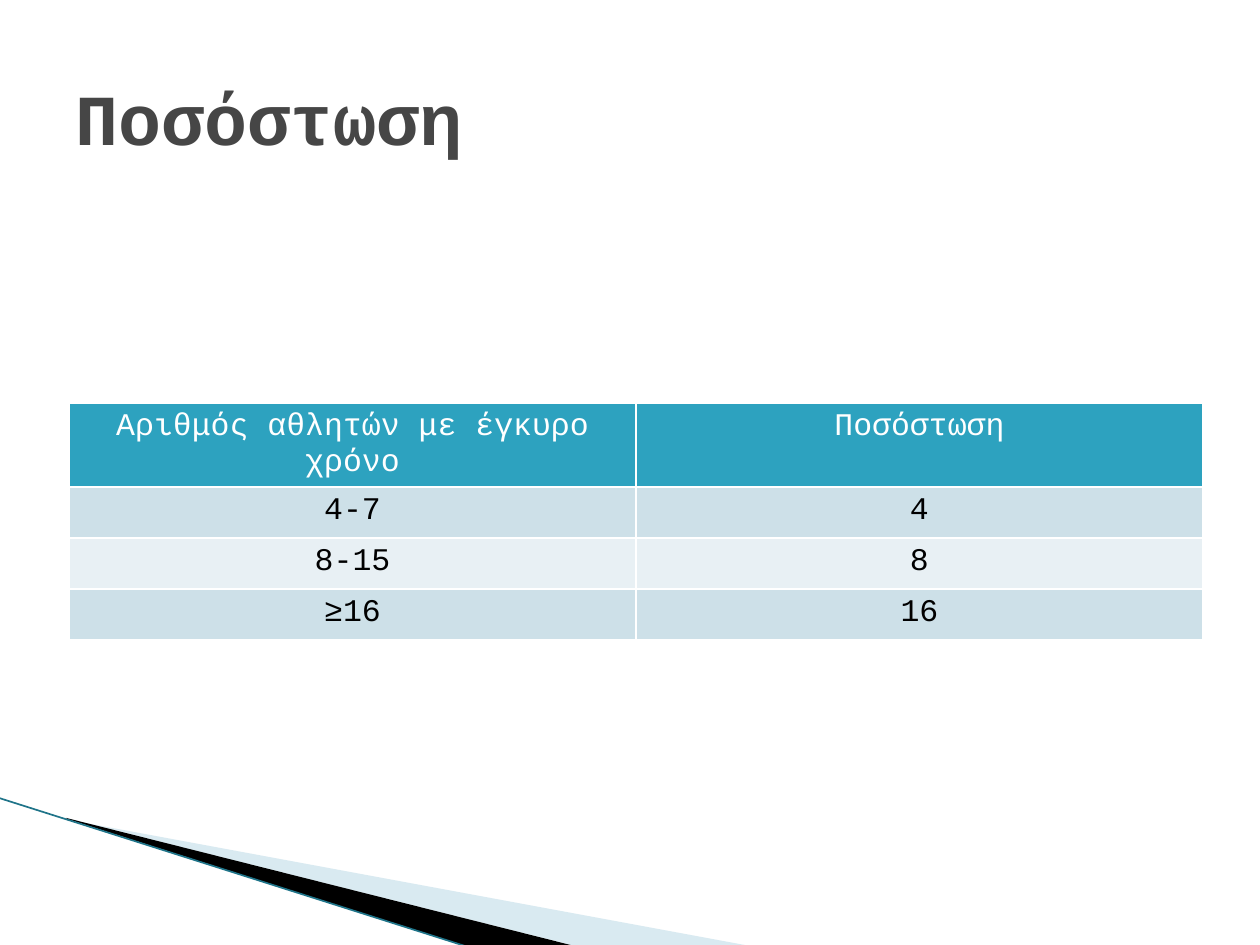
from lxml.etree import SubElement
from pptx import Presentation
from pptx.dml.color import RGBColor
from pptx.enum.shapes import MSO_CONNECTOR
from pptx.enum.text import MSO_ANCHOR, PP_ALIGN
from pptx.oxml.ns import qn
from pptx.util import Pt

PX = 914400 // 126
FONT = "Courier New"
COLORS = {
    "title": "464646", "header": "2DA2BF", "band_dark": "CDE0E8",
    "band_light": "E8F0F4", "white": "FFFFFF", "black": "000000",
    "wedge": "A0CBDC", "edge": "1F7489",
}
TITLE = "Ποσόστωση"
TITLE_BOX = (63, 38, 1134, 158)
ROWS = [
    ("Αριθμός αθλητών με έγκυρο χρόνο", "Ποσόστωση"),
    ("4-7", "4"),
    ("8-15", "8"),
    ("≥16", "16"),
]
TABLE_LEFT, TABLE_TOP, COLUMN_WIDTH = 69, 403, 567
HEADER_HEIGHT, ROW_HEIGHT = 84, 51
WEDGES = [
    ((98, 689, 524, 199),
     [(69, 820), (750, 946), (575, 946), (69, 819)], "wedge", 40),
    ((-8, 798, 524, 116),
     [(66, 818), (574, 946), (468, 947), (67, 819)], "black", 100),
]
EDGE = (-1, 798, 468, 947)


def px(*values):
    return [value * PX for value in values]


def color(name):
    return RGBColor.from_string(COLORS[name])


def style_font(paragraph, size, color_name, bold):
    for run in paragraph.runs:
        run.font.name = FONT
        run.font.size = Pt(size)
        run.font.bold = bold
        run.font.color.rgb = color(color_name)


def set_frame(shape, box, points):
    left, top, width, height = box
    shape.left, shape.top, shape.width, shape.height = px(*box)
    outline = next(shape._element.iter(qn("a:path")))
    outline.set("w", str(width * PX))
    outline.set("h", str(height * PX))
    for vertex, (x, y) in zip(outline.iter(qn("a:pt")), points):
        vertex.set("x", str((x - left) * PX))
        vertex.set("y", str((y - top) * PX))


def add_wedge(slide, box, points, color_name, opacity):
    builder = slide.shapes.build_freeform(*points[0], scale=PX)
    builder.add_line_segments(points[1:], close=False)
    shape = builder.convert_to_shape()
    set_frame(shape, box, points)
    shape.shadow.inherit = False
    shape.line.fill.background()
    shape.fill.solid()
    shape.fill.fore_color.rgb = color(color_name)
    if opacity < 100:
        fill_color = shape._element.spPr.find(qn("a:solidFill"))[0]
        SubElement(fill_color, qn("a:alpha"), val=str(opacity * 1000))


def add_edge(slide):
    line = slide.shapes.add_connector(MSO_CONNECTOR.STRAIGHT, *px(*EDGE))
    line.line.color.rgb = color("edge")
    line.line.width = Pt(0.95)
    SubElement(line._element.spPr, qn("a:effectLst"))


def set_borders(cell):
    properties = cell._tc.get_or_add_tcPr()
    for position, side in enumerate(("lnL", "lnR", "lnT", "lnB")):
        border = SubElement(properties, qn(f"a:{side}"), w=str(Pt(1)))
        fill = SubElement(border, qn("a:solidFill"))
        SubElement(fill, qn("a:srgbClr"), val=COLORS["white"])
        properties.insert(position, border)


def add_quota_table(slide):
    heights = [HEADER_HEIGHT] + [ROW_HEIGHT] * (len(ROWS) - 1)
    columns = len(ROWS[0])
    frame = slide.shapes.add_table(
        len(ROWS), columns,
        *px(TABLE_LEFT, TABLE_TOP, COLUMN_WIDTH * columns, sum(heights)))
    table = frame.table
    for column in table.columns:
        column.width = COLUMN_WIDTH * PX
    for index, texts in enumerate(ROWS):
        table.rows[index].height = heights[index] * PX
        band = "band_dark" if index % 2 else "band_light"
        for column, text in enumerate(texts):
            cell = table.cell(index, column)
            cell.text = text
            cell.fill.solid()
            cell.fill.fore_color.rgb = color(band if index else "header")
            set_borders(cell)
            paragraph = cell.text_frame.paragraphs[0]
            paragraph.alignment = PP_ALIGN.CENTER
            style_font(paragraph, 18, "black" if index else "white", False)


def add_title(slide):
    title = slide.shapes.title
    title.left, title.top, title.width, title.height = px(*TITLE_BOX)
    title.text_frame.text = TITLE
    title.text_frame.vertical_anchor = MSO_ANCHOR.MIDDLE
    paragraph = title.text_frame.paragraphs[0]
    paragraph.alignment = PP_ALIGN.LEFT
    style_font(paragraph, 41, "title", True)


def main():
    presentation = Presentation()
    presentation.slide_width, presentation.slide_height = px(1260, 945)
    slide = presentation.slides.add_slide(presentation.slide_layouts[5])
    for box, points, color_name, opacity in WEDGES:
        add_wedge(slide, box, points, color_name, opacity)
    add_edge(slide)
    add_quota_table(slide)
    add_title(slide)
    presentation.save("out.pptx")


if __name__ == "__main__":
    main()
